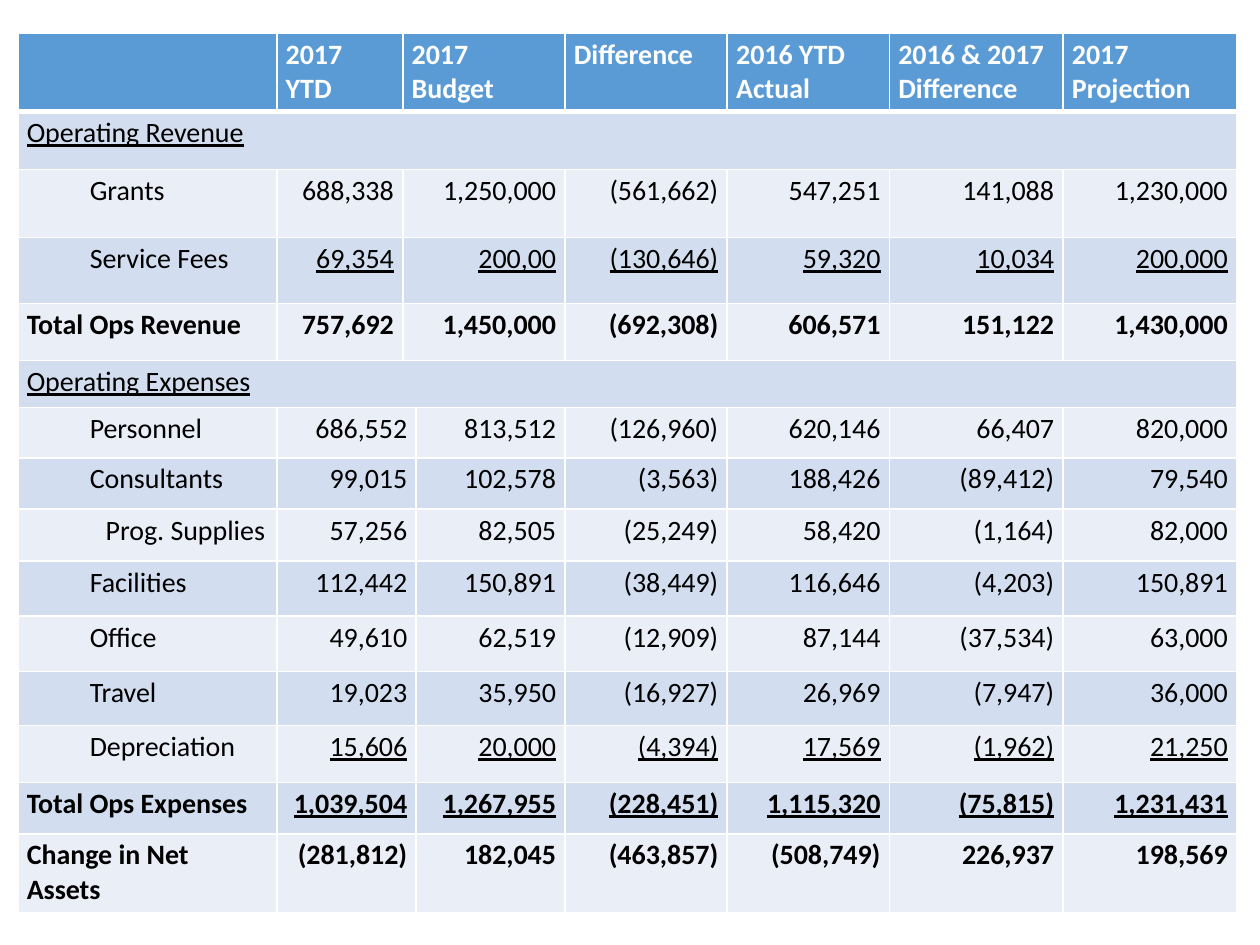
from lxml import etree
from pptx import Presentation
from pptx import util as u
from pptx.dml.color import RGBColor
from pptx.enum import text
from pptx.oxml.ns import qn

THEME = {
    "font": "Calibri", "size": u.Pt(16),
    "header": "5B9BD5", "bands": ("D2DEEF", "EAEFF7"),
    "light": "FFFFFF", "dark": "000000",
    "rule": 1, "header_rule": 3,
}

HEADER = ["", "2017 YTD", "2017 Budget", "Difference", "2016 YTD Actual",
          "2016 & 2017 Difference", "2017 Projection"]
ROWS = [
    ("header", 1.58, HEADER),
    ("section", 1.17, ["Operating Revenue"]),
    ("item", 1.37, ["Grants", "688,338", "1,250,000", "(561,662)", "547,251", "141,088", "1,230,000"]),
    ("last", 1.33, ["Service Fees", "69,354", "200,00", "(130,646)", "59,320", "10,034", "200,000"]),
    ("total", 1.15, ["Total Ops Revenue", "757,692", "1,450,000", "(692,308)", "606,571", "151,122", "1,430,000"]),
    ("section", 0.95, ["Operating Expenses"]),
    ("item", 1.01, ["Personnel", "686,552", "813,512", "(126,960)", "620,146", "66,407", "820,000"]),
    ("item", 1.03, ["Consultants", "99,015", "102,578", "(3,563)", "188,426", "(89,412)", "79,540"]),
    ("subitem", 1.05, ["Prog. Supplies", "57,256", "82,505", "(25,249)", "58,420", "(1,164)", "82,000"]),
    ("item", 1.11, ["Facilities", "112,442", "150,891", "(38,449)", "116,646", "(4,203)", "150,891"]),
    ("item", 1.12, ["Office", "49,610", "62,519", "(12,909)", "87,144", "(37,534)", "63,000"]),
    ("item", 1.09, ["Travel", "19,023", "35,950", "(16,927)", "26,969", "(7,947)", "36,000"]),
    ("last", 1.15, ["Depreciation", "15,606", "20,000", "(4,394)", "17,569", "(1,962)", "21,250"]),
    ("sum", 1.03, ["Total Ops Expenses", "1,039,504", "1,267,955", "(228,451)", "1,115,320", "(75,815)", "1,231,431"]),
    ("total", 1.6, ["Change in Net Assets", "(281,812)", "182,045", "(463,857)", "(508,749)", "226,937", "198,569"]),
]
COLUMNS = [5.22, 2.54, 0.27, 3, 3.27, 3.27, 3.5, 3.5]
INDENTS = {"item": 1.27, "last": 1.27, "subitem": 1.59}
BOLD = {"header", "total", "sum"}
EXPENSES_ROW = 5


def add_borders(cell, widths):
    tc_pr = cell._tc.get_or_add_tcPr()
    for i, (side, width) in enumerate(zip("LRTB", widths)):
        ln = etree.Element(qn("a:ln" + side), w=str(u.Pt(width)))
        fill = etree.SubElement(ln, qn("a:solidFill"))
        etree.SubElement(fill, qn("a:srgbClr"), val=THEME["light"])
        tc_pr.insert(i, ln)


def style_cell(cell, row, kind):
    fill = THEME["header"] if kind == "header" else THEME["bands"][(row - 1) % 2]
    cell.fill.solid()
    cell.fill.fore_color.rgb = RGBColor.from_string(fill)
    cell.margin_left = cell.margin_right = u.Cm(0.18)
    cell.margin_top = cell.margin_bottom = u.Cm(0.09)
    thin, thick = THEME["rule"], THEME["header_rule"]
    add_borders(cell, (thin, thin, thick if row == 1 else thin, thick if row == 0 else thin))


def write_cell(cell, value, kind, is_label):
    p = cell.text_frame.paragraphs[0]
    p.text = value
    f = p.font
    f.name, f.size, f.bold = THEME["font"], THEME["size"], kind in BOLD
    f.underline = kind == "section" if is_label else kind in ("last", "sum")
    f.color.rgb = RGBColor.from_string(THEME["light" if kind == "header" else "dark"])
    if not is_label and kind != "header":
        p.alignment = text.PP_ALIGN.RIGHT
    if is_label and kind in INDENTS:
        p.level = 1
        p._p.get_or_add_pPr().set("marL", str(u.Cm(INDENTS[kind])))


def column_spans(row, kind):
    last = len(COLUMNS) - 1
    if kind == "section":
        return [(0, last)]
    pair = [(1, 1), (2, 3)] if row < EXPENSES_ROW else [(1, 2), (3, 3)]
    return [(0, 0), *pair, *((c, c) for c in range(4, last + 1))]


def main():
    prs = Presentation()
    prs.slide_width, prs.slide_height = u.Cm(25.4), u.Cm(19.05)
    slide = prs.slides.add_slide(prs.slide_layouts[6])
    heights = [height for _, height, _ in ROWS]
    table = slide.shapes.add_table(len(ROWS), len(COLUMNS), u.Cm(0.36), u.Cm(0.67),
                                   u.Cm(sum(COLUMNS)), u.Cm(sum(heights))).table
    for column, width in zip(table.columns, COLUMNS):
        column.width = u.Cm(width)
    for row, (kind, height, values) in enumerate(ROWS):
        table.rows[row].height = u.Cm(height)
        for cell in table.rows[row].cells:
            style_cell(cell, row, kind)
        for (first, last), value in zip(column_spans(row, kind), values):
            cell = table.cell(row, first)
            if last > first:
                cell.merge(table.cell(row, last))
            write_cell(cell, value, kind, first == 0)
    prs.save("out.pptx")


if __name__ == "__main__":
    main()
